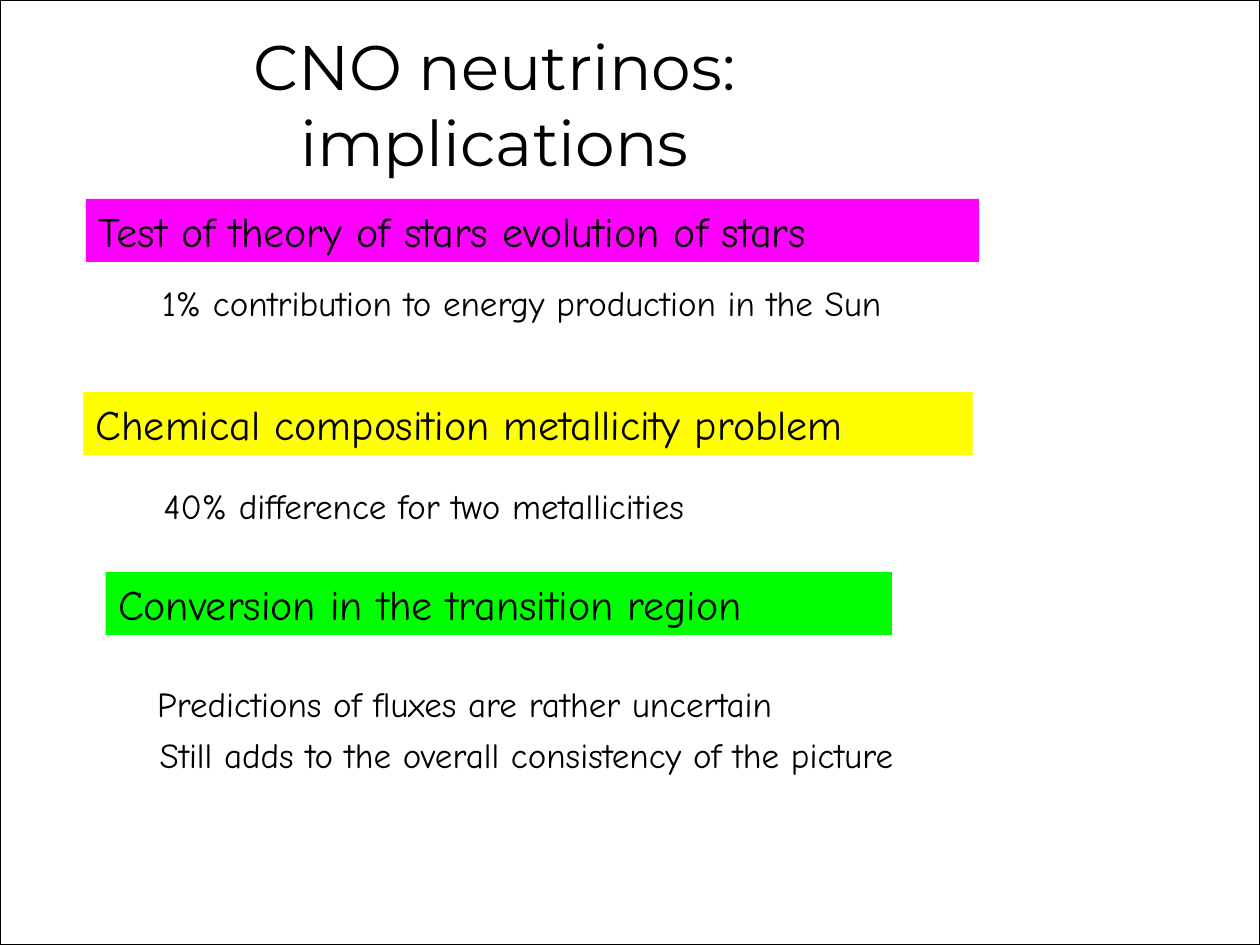
from pptx import Presentation
from pptx import util as u
from pptx.dml.color import RGBColor
from pptx.enum import shapes, text

HUES = {"ink": "000000", "page": "FFFFFF", "stars": "FF00FF",
        "metal": "FFFF00", "region": "00FF00"}
BAR, NOTE = 1.27, 1.12  # heights in cm

# Heading box (left, top, width), then notes (offset x, offset y, width, words)
PARTS = [
    ("stars", "Test of theory of stars evolution of stars", (1.73, 4.01, 18.01),
     [(1.29, 1.55, 16.59, "1% contribution to energy production in the Sun")]),
    ("metal", "Chemical composition metallicity problem", (1.68, 7.9, 17.93),
     [(1.37, 1.75, 12.83, "40% difference for two metallicities")]),
    ("region", "Conversion in the transition region", (2.13, 11.53, 15.85),
     [(0.79, 2.11, 15.98, "Predictions of fluxes are rather uncertain"),
      (0.84, 3.13, 17.65, "Still adds to the overall consistency of the picture")]),
]


def color(name):
    return RGBColor.from_string(HUES[name])


def write(shape, words, size, face="Comic Neue", align=text.PP_ALIGN.LEFT, **form):
    frame = shape.text_frame
    frame.text = words
    form = {"word_wrap": True, "auto_size": text.MSO_AUTO_SIZE.NONE,
            "vertical_anchor": text.MSO_ANCHOR.TOP, **form}
    for key, value in form.items():
        setattr(frame, key, value)
    para = frame.paragraphs[0]
    para.alignment = align
    for key, value in {"name": face, "size": u.Pt(size), "bold": False}.items():
        setattr(para.font, key, value)
    para.font.color.rgb = color("ink")


def block(slide, box, fill):
    shape = slide.shapes.add_shape(shapes.MSO_SHAPE.RECTANGLE, *box)
    shape.shadow.inherit = False
    shape.fill.solid()
    shape.fill.fore_color.rgb = color(fill)
    shape.line.fill.background()
    return shape


def border(slide, wide, high):
    frame = block(slide, (0, 0, wide, high), "page")
    frame.line.color.rgb = color("ink")
    frame.line.width = u.Pt(0.75)
    # Keep the page frame behind the title
    slide.shapes.title.element.addprevious(frame.element)


def header(slide, box):
    title = slide.shapes.title
    for key, value in zip(("left", "top", "width", "height"), box):
        setattr(title, key, u.Cm(value))
    write(title, "CNO neutrinos: implications", 36, "Montserrat",
          text.PP_ALIGN.CENTER, word_wrap=False,
          vertical_anchor=text.MSO_ANCHOR.MIDDLE)


def section(slide, box, fill, head, notes):
    left, top, wide = box
    bar = block(slide, [u.Cm(n) for n in (left, top, wide, BAR)], fill)
    write(bar, head, 24)
    for dx, dy, width, words in notes:
        place = (left + dx, top + dy, width, NOTE)
        note = slide.shapes.add_textbox(*[u.Cm(n) for n in place])
        write(note, words, 20)


def main():
    deck = Presentation()
    deck.slide_width, deck.slide_height = u.Cm(25.4), u.Cm(19.05)
    slide = deck.slides.add_slide(deck.slide_layouts[5])

    # Page frame and title
    border(slide, deck.slide_width, deck.slide_height)
    header(slide, (1.52, 1.04, 16.89, 2.08))

    # Coloured headings with their notes
    for fill, head, box, notes in PARTS:
        section(slide, box, fill, head, notes)
    deck.save("out.pptx")


if __name__ == "__main__":
    main()
